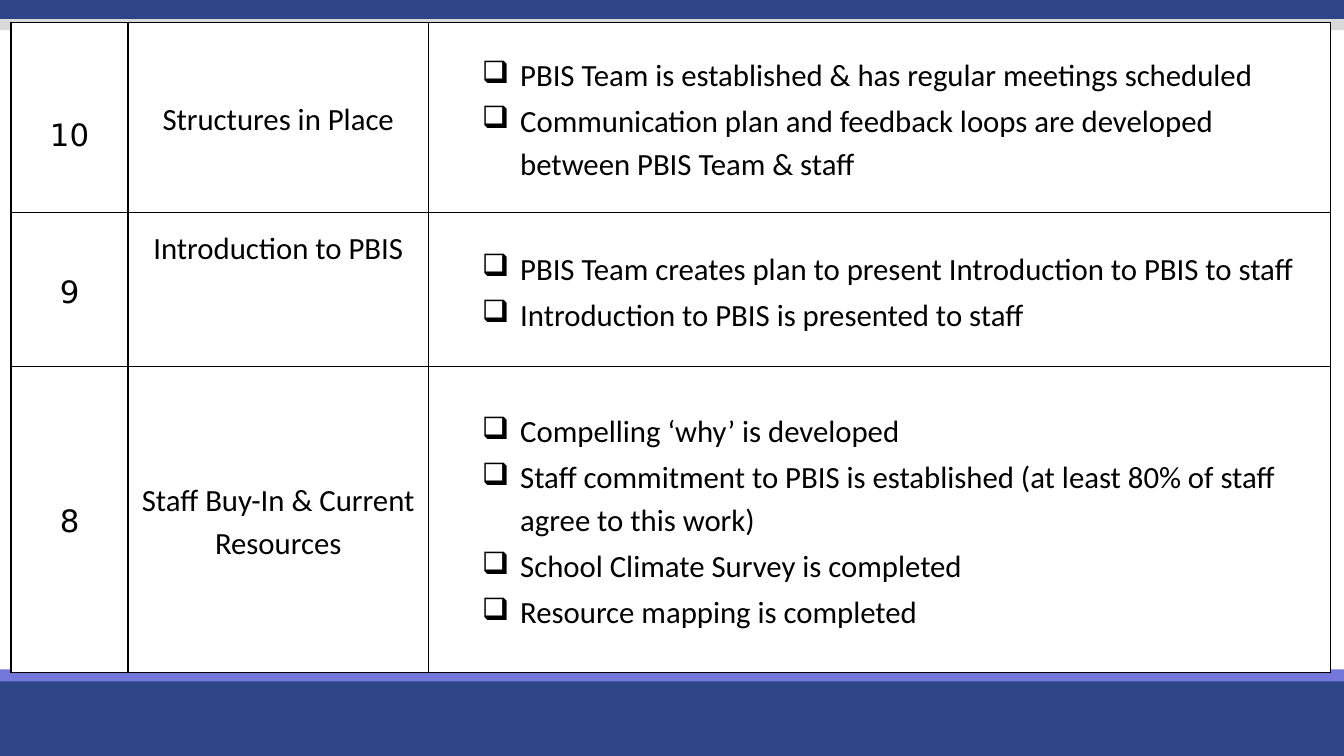
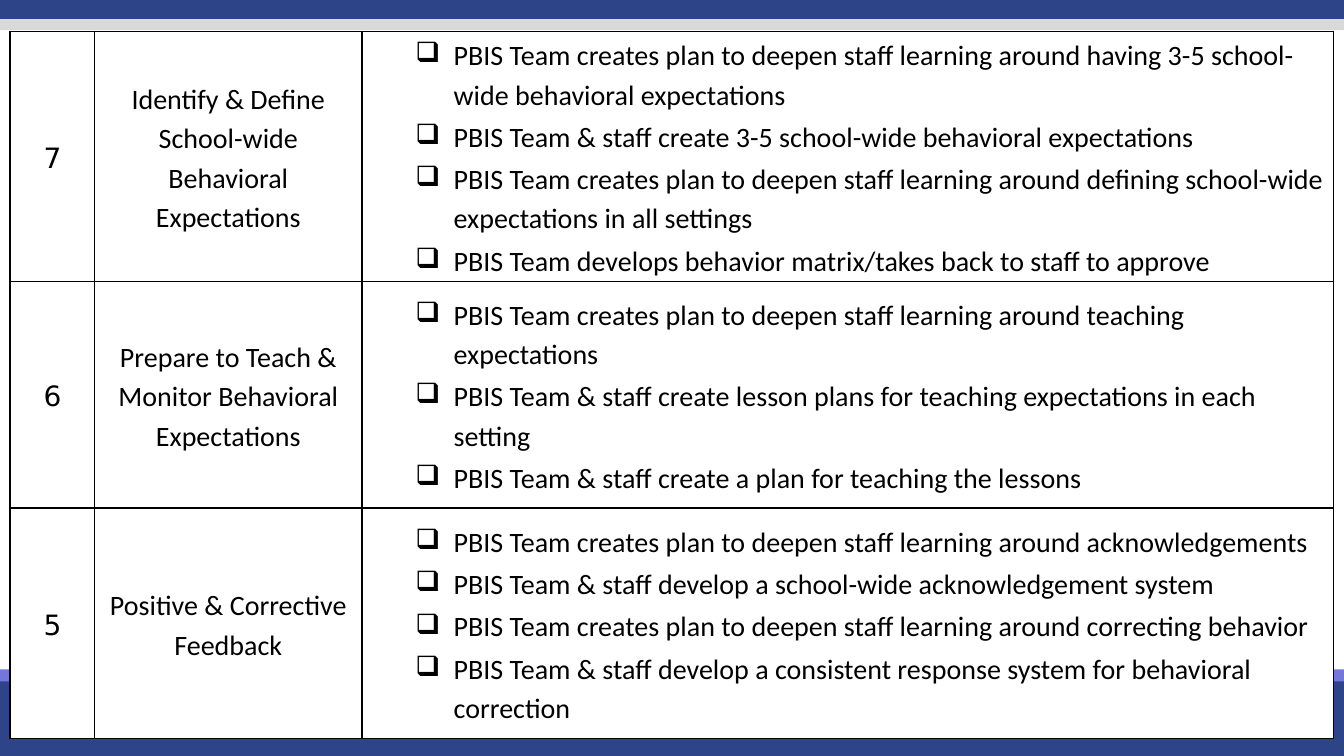
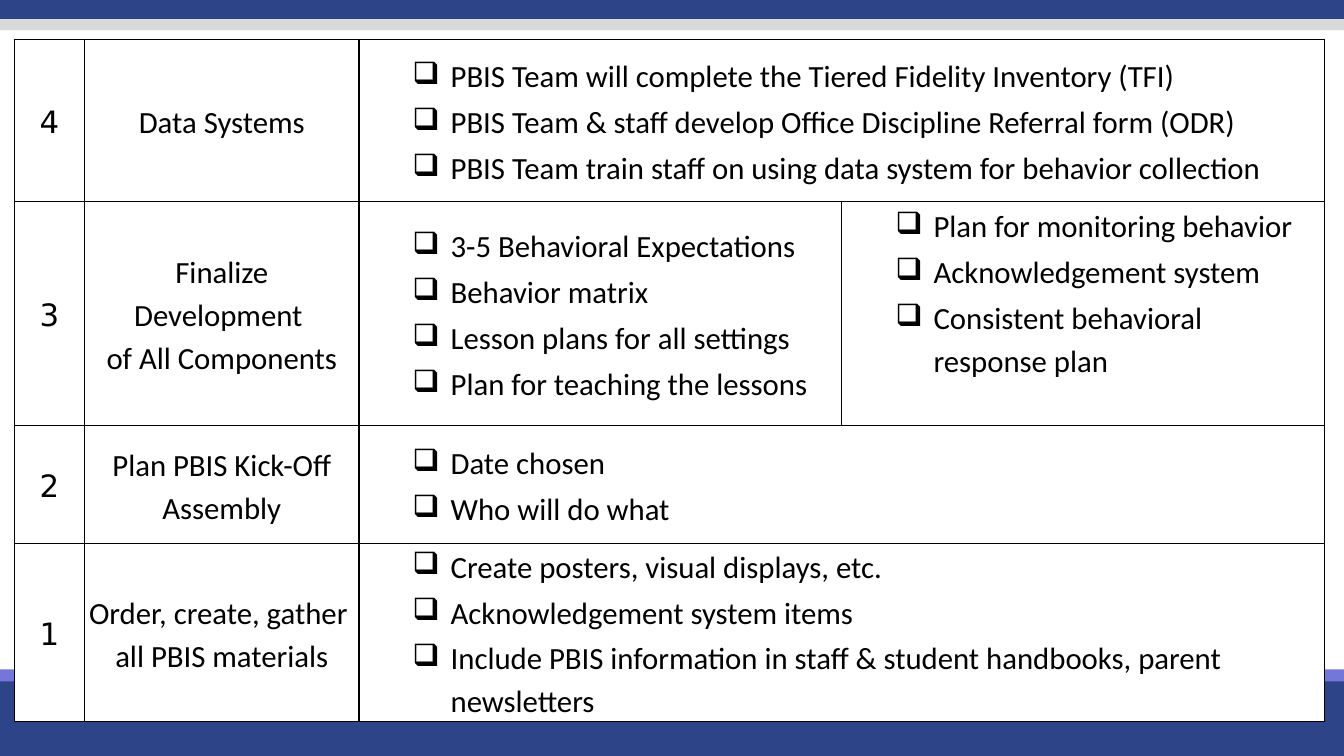
from lxml import etree
from pptx import Presentation
from pptx.dml.color import RGBColor
from pptx.enum.shapes import MSO_SHAPE
from pptx.enum.text import MSO_ANCHOR, PP_ALIGN
from pptx.oxml.ns import qn
from pptx.util import Pt

RECT = MSO_SHAPE.RECTANGLE
MIDDLE = MSO_ANCHOR.MIDDLE
CENTER, LEFT = PP_ALIGN.CENTER, PP_ALIGN.LEFT

PX = 9144  # 100 px to the inch
WIDE, HIGH = 1333, 750
BLANK = 6
COLORS = {"navy": "2E4488", "violet": "7476DA", "gray": "D9D9D9",
          "white": "FFFFFF", "black": "000000"}
BODY, DIGIT = "Calibri", "DejaVu Sans"

# Bands on every slide: top, height, color
BANDS = [(670, 80, "navy"), (664, 12, "violet"), (0, 19, "navy"), (19, 11, "gray")]

# Each row: step number, topic lines, then one or two checklists.
# "pads" holds extra cell margins by row and column.
TABLES = [
    {"at": (11, 22), "cols": [116, 298, 895], "rows": [189, 153, 303], "size": 22,
     "pads": {(0, 0): (32, 0), (1, 1): (0, 86)},
     "steps": [
         ("10", ["Structures in Place"],
          ["PBIS Team is established & has regular meetings scheduled",
           "Communication plan and feedback loops are developed between PBIS Team & staff"]),
         ("9", ["Introduction to PBIS"],
          ["PBIS Team creates plan to present Introduction to PBIS to staff",
           "Introduction to PBIS is presented to staff"]),
         ("8", ["Staff Buy-In & Current Resources"],
          ["Compelling ‘why’ is developed",
           "Staff commitment to PBIS is established (at least 80% of staff agree to this work)",
           "School Climate Survey is completed",
           "Resource mapping is completed"])]},
    {"at": (10, 31), "cols": [84, 265, 964], "rows": [248, 225, 229], "size": 20,
     "pads": {},
     "steps": [
         ("7", ["Identify & Define", "School-wide Behavioral Expectations"],
          ["PBIS Team creates plan to deepen staff learning around having 3-5 school-wide "
           "behavioral expectations",
           "PBIS Team & staff create 3-5 school-wide behavioral expectations",
           "PBIS Team creates plan to deepen staff learning around defining school-wide "
           "expectations in all settings",
           "PBIS Team develops behavior matrix/takes back to staff to approve"]),
         ("6", ["Prepare to Teach & Monitor Behavioral Expectations"],
          ["PBIS Team creates plan to deepen staff learning around teaching expectations",
           "PBIS Team & staff create lesson plans for teaching expectations in each setting",
           "PBIS Team & staff create a plan for teaching the lessons"]),
         ("5", ["Positive & Corrective Feedback"],
          ["PBIS Team creates plan to deepen staff learning around acknowledgements",
           "PBIS Team & staff develop a school-wide acknowledgement system",
           "PBIS Team creates plan to deepen staff learning around correcting behavior",
           "PBIS Team & staff develop a consistent response system for behavioral "
           "correction"])]},
    {"at": (14, 39), "cols": [70, 272, 479, 479], "rows": [161, 222, 117, 176], "size": 22,
     "pads": {(1, 3): (0, 43)},
     "steps": [
         ("4", ["Data Systems"],
          ["PBIS Team will complete the Tiered Fidelity Inventory (TFI)",
           "PBIS Team & staff develop Office Discipline Referral form (ODR)",
           "PBIS Team train staff on using data system for behavior collection"]),
         ("3", ["Finalize Development ", "of All Components"],
          ["3-5 Behavioral Expectations",
           "Behavior matrix",
           "Lesson plans for all settings",
           "Plan for teaching the lessons"],
          ["Plan for monitoring behavior",
           "Acknowledgement system",
           "Consistent behavioral response plan"]),
         ("2", ["Plan PBIS Kick-Off Assembly"],
          ["Date chosen", "Who will do what"]),
         ("1", ["Order, create, gather ", "all PBIS materials"],
          ["Create posters, visual displays, etc.",
           "Acknowledgement system items",
           "Include PBIS information in staff & student handbooks, parent newsletters"])]},
]


def color(name):
    return RGBColor.from_string(COLORS[name])


def add_bands(slide):
    for top, height, name in BANDS:
        band = slide.shapes.add_shape(RECT, 0, top * PX, WIDE * PX, height * PX)
        band.shadow.inherit = False
        band.fill.solid()
        band.fill.fore_color.rgb = color(name)
        band.line.fill.background()


def set_box(cell, pad):
    """White cell with thin black borders."""
    cell.fill.solid()
    cell.fill.fore_color.rgb = color("white")
    cell.vertical_anchor = MIDDLE
    cell.margin_left = cell.margin_right = 3 * PX
    cell.margin_top, cell.margin_bottom = (side * PX for side in pad)
    props = cell._tc.get_or_add_tcPr()
    for spot, side in enumerate("LRTB"):
        line = etree.Element(qn(f"a:ln{side}"), w=str(Pt(1)))
        fill = etree.SubElement(line, qn("a:solidFill"))
        etree.SubElement(fill, qn("a:srgbClr"), val=COLORS["black"])
        props.insert(spot, line)


def add_check(para):
    """Hanging check box in front of a paragraph."""
    para.level = 1
    props = para._p.get_or_add_pPr()
    props.set("marL", str(88 * PX))
    props.set("indent", str(-38 * PX))
    etree.SubElement(props, qn("a:buChar"), char="❑")
    para.space_after = Pt(2)


def write(cell, lines, size, font=BODY, check=False):
    frame = cell.text_frame
    for i, line in enumerate(lines):
        para = frame.add_paragraph() if i else frame.paragraphs[0]
        if check:
            add_check(para)
        para.alignment = LEFT if check else CENTER
        para.line_spacing = 1.15
        run = para.add_run()
        run.text = line
        run.font.size = Pt(size)
        run.font.name = font
        run.font.color.rgb = color("black")


def add_steps(slide, data):
    cols, rows, size = data["cols"], data["rows"], data["size"]
    left, top = data["at"]
    table = slide.shapes.add_table(len(rows), len(cols), left * PX, top * PX,
                                   sum(cols) * PX, sum(rows) * PX).table
    table.first_row = table.horz_banding = False
    for col, width in zip(table.columns, cols):
        col.width = width * PX
    for row, height in zip(table.rows, rows):
        row.height = height * PX
    for r, (step, topic, *lists) in enumerate(data["steps"]):
        for c in range(len(cols)):
            set_box(table.cell(r, c), data["pads"].get((r, c), (0, 0)))
        write(table.cell(r, 0), [step], size, DIGIT)
        write(table.cell(r, 1), topic, size)
        for c, items in enumerate(lists, 2):
            write(table.cell(r, c), items, size, check=True)
        # A lone checklist spans all columns that are left
        if len(lists) < len(cols) - 2:
            table.cell(r, 2).merge(table.cell(r, len(cols) - 1))


def main():
    deck = Presentation()
    deck.slide_width, deck.slide_height = WIDE * PX, HIGH * PX
    for data in TABLES:
        slide = deck.slides.add_slide(deck.slide_layouts[BLANK])
        add_bands(slide)
        add_steps(slide, data)
    deck.save("out.pptx")


if __name__ == "__main__":
    main()
